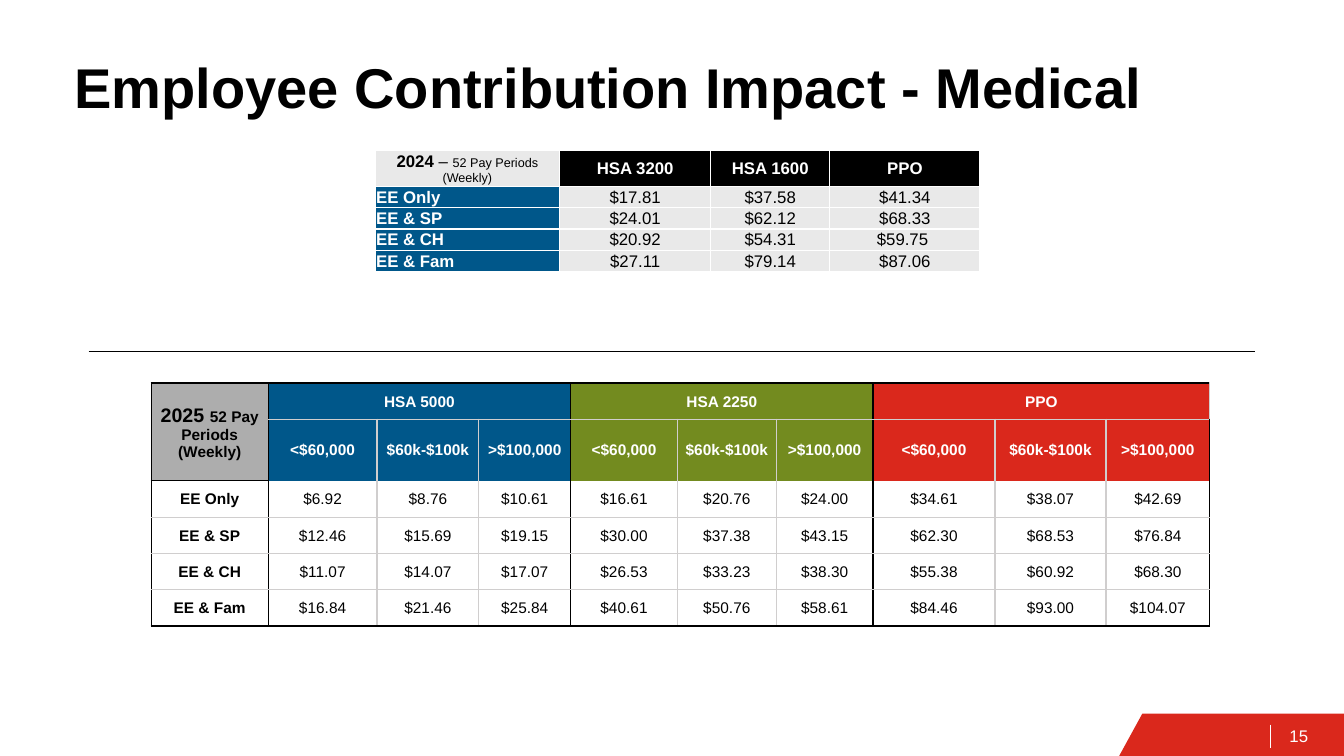
from lxml.etree import SubElement
from pptx import Presentation
from pptx.dml.color import RGBColor
from pptx.enum.shapes import MSO_CONNECTOR
from pptx.enum.text import MSO_ANCHOR, PP_ALIGN
from pptx.oxml.ns import qn
from pptx.util import Inches, Pt

BLACK = RGBColor(0x00, 0x00, 0x00)
WHITE = RGBColor(0xFF, 0xFF, 0xFF)
LIGHT = RGBColor(0xE9, 0xE9, 0xE9)
GREY = RGBColor(0xAD, 0xAD, 0xAD)
RULE = RGBColor(0xD0, 0xCE, 0xCE)
BLUE = RGBColor(0x00, 0x57, 0x8A)
GREEN = RGBColor(0x73, 0x8B, 0x1F)
RED = RGBColor(0xDA, 0x28, 0x1C)


def add_run(paragraph, text, size, color, bold=False):
    run = paragraph.add_run()
    run.text = text
    for name, value in {"name": "Arial", "size": Pt(size), "bold": bold}.items():
        setattr(run.font, name, value)
    run.font.color.rgb = color


def format_cell(cell, runs, fill, borders, align=PP_ALIGN.CENTER):
    """Runs are (text, size, color, bold); borders are left, right, top, bottom colours."""
    layout = {"margin_left": Inches(0.01), "margin_right": Inches(0.01),
              "margin_top": Inches(0.01), "margin_bottom": 0,
              "vertical_anchor": MSO_ANCHOR.MIDDLE}
    for name, value in layout.items():
        setattr(cell, name, value)
    paragraph = cell.text_frame.paragraphs[0]
    paragraph.alignment = align
    for run in runs:
        add_run(paragraph, *run)
    properties = cell._tc.get_or_add_tcPr()
    for side, color in zip("LRTB", borders):
        edge = SubElement(properties, qn(f"a:ln{side}"), w=str(Pt(1)))
        if color is None:
            SubElement(edge, qn("a:noFill"))
        else:
            SubElement(SubElement(edge, qn("a:solidFill")), qn("a:srgbClr"), val=str(color))
    if fill is None:
        cell.fill.background()
    else:
        cell.fill.solid()
        cell.fill.fore_color.rgb = fill


deck = Presentation()
deck.slide_width, deck.slide_height = Inches(13.33), Inches(7.5)
slide = deck.slides.add_slide(deck.slide_layouts[6])

# Footer band
band_builder = slide.shapes.build_freeform(Inches(13.33), Inches(7.5))
band_builder.add_line_segments(
    [(Inches(x), Inches(y)) for x, y in [(11.1, 7.5), (11.33, 7.08), (13.33, 7.08)]])
band = band_builder.convert_to_shape()
band.shadow.inherit = False
band.fill.solid()
band.fill.fore_color.rgb = RED
band.line.fill.background()

# Title and page number
for text, box, insets, anchor, size, color, bold in [
    ("Employee Contribution Impact - Medical", (0.67, 0.4, 11.75, 1.45),
     (0.07, 0.12), MSO_ANCHOR.TOP, 40, BLACK, True),
    ("15", (12.66, 7.1, 0.67, 0.4), (0.13, 0.07), MSO_ANCHOR.MIDDLE, 12, WHITE, False),
]:
    frame = slide.shapes.add_textbox(*map(Inches, box)).text_frame
    side, edge = map(Inches, insets)
    layout = {"word_wrap": True, "vertical_anchor": anchor, "margin_left": side,
              "margin_right": side, "margin_top": edge, "margin_bottom": edge}
    for name, value in layout.items():
        setattr(frame, name, value)
    add_run(frame.paragraphs[0], text, size, color, bold)

# Divider between the years and footer tick
for ends, color, width in [((0.88, 3.49, 12.45, 3.49), BLACK, 1),
                           ((12.6, 7.19, 12.6, 7.42), WHITE, 0.75)]:
    rule = slide.shapes.add_connector(MSO_CONNECTOR.STRAIGHT, *map(Inches, ends))
    rule.line.color.rgb = color
    rule.line.width = Pt(width)
    SubElement(rule._element.spPr, qn("a:effectLst"))

# Table sizes for both years
tables = []
for left, top, widths, heights in [
    (3.72, 1.49, [1.83, 1.5, 1.18, 1.49], [0.33] + [0.2] * 4),
    (1.5, 3.8, [1.16, 1.08, 1.01, 0.91, 1.06, 0.98, 0.96, 1.21, 1.1, 1.03],
     [0.36, 0.55] + [0.36] * 4),
]:
    table = slide.shapes.add_table(
        len(heights), len(widths), Inches(left), Inches(top),
        Inches(sum(widths)), Inches(sum(heights))).table
    table.first_row = table.horz_banding = False
    for column, width in zip(table.columns, widths):
        column.width = Inches(width)
    for row, height in zip(table.rows, heights):
        row.height = Inches(height)
    tables.append(table)
table_2024, table_2025 = tables

# 2024 contributions
tiers = ["EE Only", "EE & SP", "EE & CH", "EE & Fam"]
rates_2024 = [
    ["$17.81", "$37.58", "$41.34"],
    ["$24.01", "$62.12", "$68.33"],
    ["$20.92", "$54.31", "$59.75 "],
    ["$27.11", "$79.14", "$87.06"],
]
white_edges = [WHITE] * 4
format_cell(table_2024.cell(0, 0),
            [("2024", 12, BLACK, True), (" – ", 12, BLACK),
             ("52 Pay Periods (Weekly)", 9, BLACK)], LIGHT, white_edges)
for c, plan in enumerate(["HSA 3200", "HSA 1600", "PPO"], 1):
    format_cell(table_2024.cell(0, c), [(plan, 12, WHITE, True)], BLACK, white_edges)
for r, (tier, rates) in enumerate(zip(tiers, rates_2024), 1):
    format_cell(table_2024.cell(r, 0), [(tier, 12, WHITE, True)], BLUE, white_edges,
                PP_ALIGN.LEFT)
    for c, rate in enumerate(rates, 1):
        format_cell(table_2024.cell(r, c), [(rate, 12, BLACK)], LIGHT, white_edges)

# 2025 contributions by plan and salary band
plans_2025 = [("HSA 5000", BLUE), ("HSA 2250", GREEN), ("PPO", RED)]
salary_bands = ["<$60,000", "$60k-$100k", ">$100,000"]
rates_2025 = [
    ["$6.92", "$8.76", "$10.61", "$16.61", "$20.76", "$24.00", "$34.61", "$38.07", "$42.69"],
    ["$12.46", "$15.69", "$19.15", "$30.00", "$37.38", "$43.15", "$62.30", "$68.53", "$76.84"],
    ["$11.07", "$14.07", "$17.07", "$26.53", "$33.23", "$38.30", "$55.38", "$60.92", "$68.30"],
    ["$16.84", "$21.46", "$25.84", "$40.61", "$50.76", "$58.61", "$84.46", "$93.00", "$104.07"],
]
table_2025.cell(0, 0).merge(table_2025.cell(1, 0))
for c in (1, 4, 7):
    table_2025.cell(0, c).merge(table_2025.cell(0, c + 2))

for r in range(6):
    for c in range(10):
        plan, plan_color = plans_2025[(c - 1) // 3] if c else ("", GREY)
        fill = plan_color if r < 2 else None
        if c == 0 and r == 0:
            runs = [("2025 ", 14, BLACK, True), ("52 Pay Periods (Weekly)", 11, BLACK, True)]
        elif c == 0:
            runs = [(tiers[r - 2], 11, BLACK, True)] if r > 1 else []
        elif r == 0:
            runs = [(plan, 11, WHITE, True)] if c % 3 == 1 else []
        elif r == 1:
            runs = [(salary_bands[(c - 1) % 3], 11, WHITE, True)]
        else:
            runs = [(rates_2025[r - 2][c - 1], 11, BLACK)]
        # Black frames each plan; the header meets the rates without a rule
        header_edge = None if c else BLACK
        borders = [
            BLACK if c == 0 or c % 3 == 1 else RULE,
            BLACK if c % 3 == 0 else RULE,
            {0: BLACK, 2: header_edge}.get(r, RULE),
            {1: header_edge, 5: BLACK}.get(r, RULE if c or r else BLACK),
        ]
        format_cell(table_2025.cell(r, c), runs, fill, borders)

deck.save("out.pptx")
